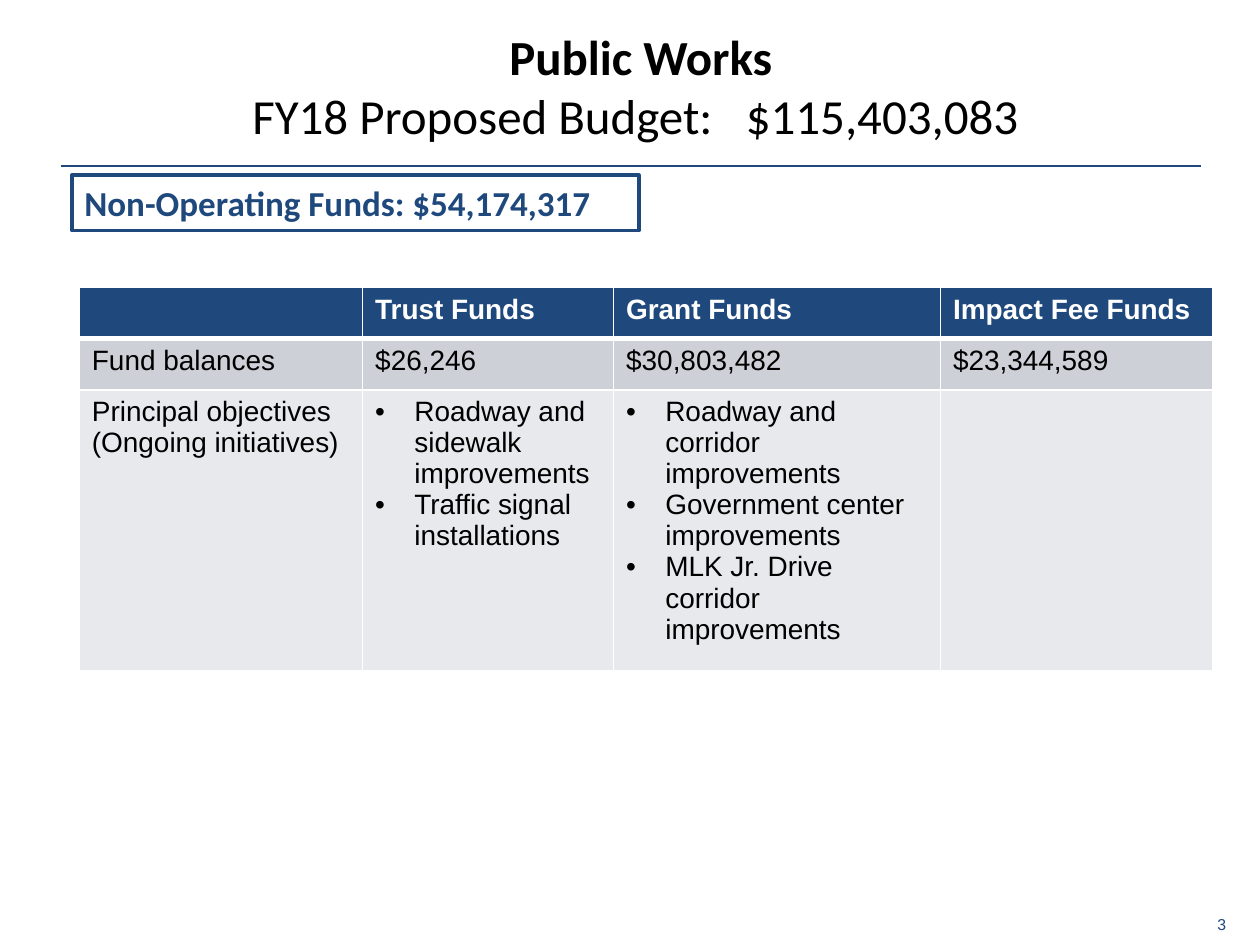
from lxml.etree import SubElement
from pptx import Presentation
from pptx.dml.color import RGBColor
from pptx.enum.shapes import MSO_CONNECTOR, MSO_SHAPE
from pptx.enum.text import MSO_ANCHOR, MSO_AUTO_SIZE, PP_ALIGN
from pptx.oxml.ns import qn
from pptx.util import Cm, Pt

COLORS = {
    "navy": "1F497D",
    "black": "000000",
    "white": "FFFFFF",
    "balance": "CDD0D7",
    "objective": "E8E9EC",
}

HEADINGS = ["", "Trust Funds", "Grant Funds", "Impact Fee Funds"]
BALANCES = ["Fund balances", "$26,246", "$30,803,482", "$23,344,589"]
LABEL = ["Principal objectives", "(Ongoing initiatives)"]
OBJECTIVES = [
    ["Roadway and sidewalk improvements", "Traffic signal installations"],
    ["Roadway and corridor improvements", "Government center improvements",
     "MLK Jr. Drive corridor improvements"],
    [],
]
COLUMN_WIDTHS = [5.71, 5.06, 6.59, 5.49]
ROW_HEIGHTS = [1.03, 1.03, 5.26]


def color(name):
    return RGBColor.from_string(COLORS[name])


def style(font, tint, **values):
    font.color.rgb = color(tint)
    for name, value in values.items():
        setattr(font, name, value)


def add_title(page, left, top, width, height):
    title = page.shapes.title
    title.left, title.top, title.width, title.height = left, top, width, height
    frame = title.text_frame
    settings = {"word_wrap": True, "auto_size": MSO_AUTO_SIZE.NONE,
                "vertical_anchor": MSO_ANCHOR.MIDDLE, "margin_left": Cm(0.38)}
    for name, value in settings.items():
        setattr(frame, name, value)
    para = frame.paragraphs[0]
    para.alignment = PP_ALIGN.CENTER

    def add_span(text, bold=False):
        span = para.add_run()
        span.text = text
        style(span.font, "black", name="Calibri", size=Pt(28), bold=bold)
        return span

    add_span("Public Works", bold=True)
    para.add_line_break()
    add_span("FY18 Proposed Budget:")
    gap = add_span(" ")
    gap.font._element.set("spc", "1270")  # widens the gap before the amount
    add_span("$115,403,083 ")


def add_rule(page, left, top, width):
    rule = page.shapes.add_connector(
        MSO_CONNECTOR.STRAIGHT, left, top, left + width, top)
    rule.line.color.rgb = color("navy")
    rule.line.width = Pt(1.5)
    SubElement(rule._element.spPr, qn("a:effectLst"))


def add_total(page, left, top, width, height):
    total = page.shapes.add_shape(MSO_SHAPE.RECTANGLE, left, top, width, height)
    total.shadow.inherit = False
    total.fill.background()
    total.line.color.rgb = color("navy")
    total.line.width = Pt(2)
    frame = total.text_frame
    frame.word_wrap = True
    frame.vertical_anchor = MSO_ANCHOR.TOP
    para = frame.paragraphs[0]
    para.text = "Non-Operating Funds: $54,174,317"
    para.alignment = PP_ALIGN.LEFT
    style(para.font, "navy", name="Calibri", size=Pt(20), bold=True)


def add_borders(cell, bottom):
    props = cell._tc.get_or_add_tcPr()
    for side, points in {"L": 1, "R": 1, "T": 1, "B": bottom}.items():
        edge = SubElement(props, qn(f"a:ln{side}"), w=str(Pt(points)))
        fill = SubElement(edge, qn("a:solidFill"))
        SubElement(fill, qn("a:srgbClr"), val=COLORS["white"])


def add_bullet(para):
    props = para._p.get_or_add_pPr()
    props.set("marL", str(Cm(0.79)))
    props.set("indent", str(-Cm(0.79)))
    SubElement(props, qn("a:buFont"), typeface="Arial")
    SubElement(props, qn("a:buChar"), char="•")


def fill_cell(cell, lines, fill, tint="black", bold=False, bulleted=False, bottom=1):
    add_borders(cell, bottom)
    cell.fill.solid()
    cell.fill.fore_color.rgb = color(fill)
    frame = cell.text_frame
    for index, line in enumerate(lines or [""]):
        para = frame.add_paragraph() if index else frame.paragraphs[0]
        para.text = line
        if bulleted and line:
            add_bullet(para)
        style(para.font, tint, name="Arial", size=Pt(16), bold=bold)


def add_funds_table(page, left, top):
    table = page.shapes.add_table(
        len(ROW_HEIGHTS), len(COLUMN_WIDTHS), left, top,
        Cm(sum(COLUMN_WIDTHS)), Cm(sum(ROW_HEIGHTS))).table
    for row, height in zip(table.rows, ROW_HEIGHTS):
        row.height = Cm(height)
    for index, width in enumerate(COLUMN_WIDTHS):
        table.columns[index].width = Cm(width)
        fill_cell(table.cell(0, index), [HEADINGS[index]], "navy",
                  tint="white", bold=True, bottom=3)
        fill_cell(table.cell(1, index), [BALANCES[index]], "balance")
    fill_cell(table.cell(2, 0), LABEL, "objective")
    for index, goals in enumerate(OBJECTIVES, start=1):
        fill_cell(table.cell(2, index), goals, "objective", bulleted=True)


def add_page_number(page, left, top, width, height):
    frame = page.shapes.add_textbox(left, top, width, height).text_frame
    frame.word_wrap = False
    frame.margin_left = frame.margin_right = Cm(0.23)
    frame.margin_top = frame.margin_bottom = Cm(0.1)
    para = frame.paragraphs[0]
    para.text = "3"
    style(para.font, "navy", name="Arial", size=Pt(9))


def main():
    deck = Presentation()
    deck.slide_width, deck.slide_height = Cm(25.4), Cm(19.05)
    page = deck.slides.add_slide(deck.slide_layouts[5])
    add_page_number(page, Cm(24.31), Cm(18.34), Cm(0.84), Cm(0.61))
    add_rule(page, Cm(1.22), Cm(3.35), Cm(22.99))
    add_title(page, Cm(3), Cm(0.41), Cm(19.71), Cm(2.64))
    add_funds_table(page, Cm(1.6), Cm(5.8))
    add_total(page, Cm(1.45), Cm(3.53), Cm(11.43), Cm(1.12))
    deck.save("out.pptx")


if __name__ == "__main__":
    main()
